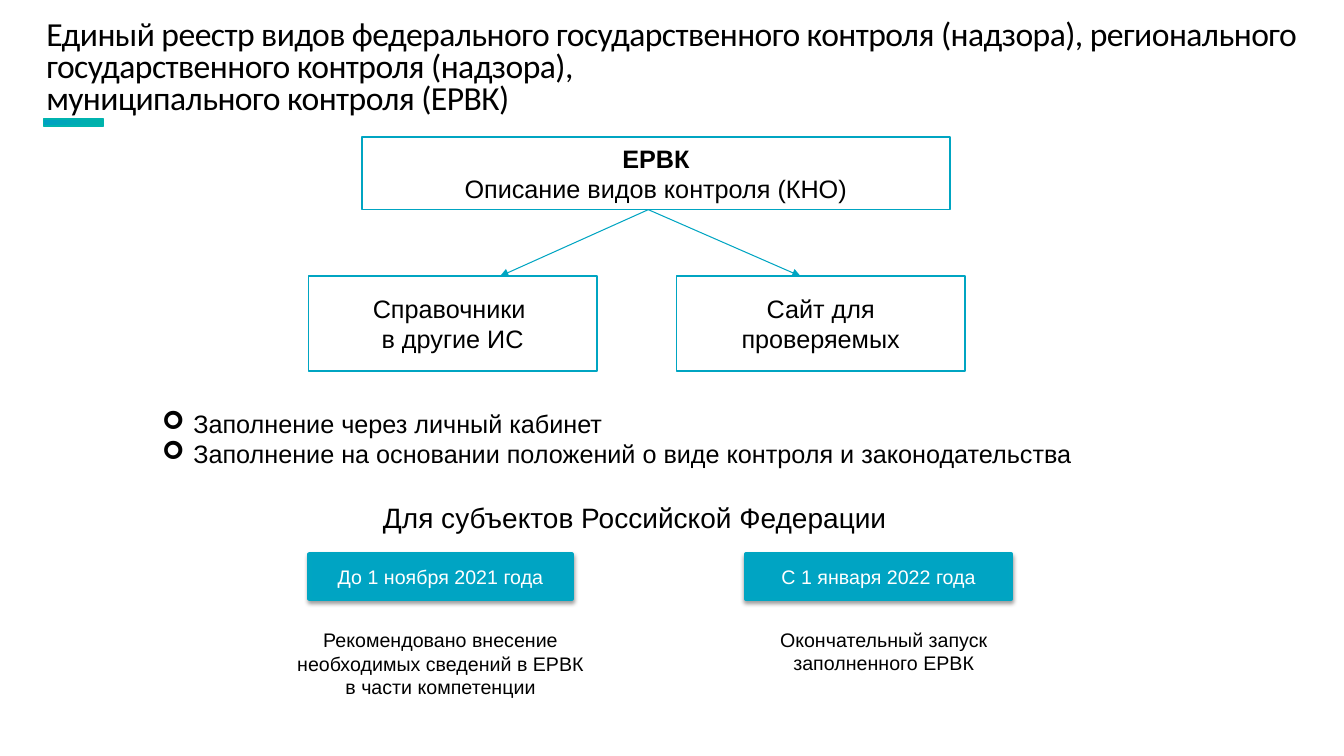
from lxml.etree import SubElement
from pptx import Presentation
from pptx.dml.color import RGBColor
from pptx.enum.shapes import MSO_CONNECTOR, MSO_SHAPE
from pptx.enum.text import MSO_ANCHOR, PP_ALIGN
from pptx.oxml.ns import qn
from pptx.util import Inches, Pt

HEX = {"ink": "000000", "white": "FFFFFF", "edge": "00A5C2", "fill": "00A4C3",
       "from": "00A0C3", "to": "00B3A9", "rim": "00B3AF"}
TITLE = ("Единый реестр видов федерального государственного контроля (надзора), "
         "регионального государственного контроля (надзора), \n"
         "муниципального контроля (ЕРВК)")
ROOT = ["ЕРВК", "Описание видов контроля (КНО)"]
LEAVES = [(3.06, 4.96, "Справочники \nв другие ИС"),
          (6.71, 7.94, "Сайт для проверяемых")]
NOTES = ["Заполнение через личный кабинет",
         "Заполнение на основании положений о виде контроля и законодательства"]
HEAD = "Для субъектов Российской Федерации"
DATES = [
    ((3.07, 2.6), "До 1 ноября 2021 года", (2.82, 3.1, 0.81),
     "Рекомендовано внесение необходимых сведений в ЕРВК в части компетенции"),
    ((7.4, 2.63), "С 1 января 2022 года", (7.34, 2.85, 0.57),
     "Окончательный запуск заполненного ЕРВК"),
]


def tone(name):
    return RGBColor.from_string(HEX[name])


def node(top, tag, **attrs):
    return SubElement(top, qn(tag), attrs)


def write(shape, lines, size=18, font="Arial", color="ink", align=PP_ALIGN.LEFT,
          anchor=MSO_ANCHOR.TOP, bold=0, inset=(0.1, 0.05), wrap=True,
          space=None, before=None, after=None, track=None, mark=None):
    """Fill a shape with formatted paragraphs; the first `bold` ones are bold."""
    frame = shape.text_frame
    frame.word_wrap, frame.vertical_anchor = wrap, anchor
    frame.margin_left = frame.margin_right = Inches(inset[0])
    frame.margin_top = frame.margin_bottom = Inches(inset[1])
    for i, line in enumerate(lines):
        para = frame.add_paragraph() if i else frame.paragraphs[0]
        para.text, para.alignment, para.line_spacing = line, align, space
        para.space_before = None if before is None else Pt(before)
        para.space_after = None if after is None else Pt(after)
        for run in para.runs:
            run.font.size, run.font.name, run.font.bold = Pt(size), font, i < bold
            run.font.color.rgb = tone(color)
            if track:
                run.font._element.set("spc", str(track))
        if mark:
            props = para._p.get_or_add_pPr()
            props.set("marL", str(Inches(0.31)))
            props.set("indent", str(-Inches(0.31)))
            node(props, "a:buFont", typeface="Wingdings")
            node(props, "a:buChar", char=mark)


def text(slide, place, lines, **style):
    box = slide.shapes.add_textbox(*map(Inches, place))
    write(box, lines, **style)


def rect(slide, place, line="edge", width=1.25, fill=None):
    box = slide.shapes.add_shape(MSO_SHAPE.RECTANGLE, *map(Inches, place))
    box.shadow.inherit = False
    box.line.color.rgb, box.line.width = tone(line), Pt(width)
    if fill:
        box.fill.solid()
        box.fill.fore_color.rgb = tone(fill)
    else:
        box.fill.background()
    return box


def shade(box):
    glow = node(box._element.spPr.find(qn("a:effectLst")), "a:outerShdw",
                blurRad=str(Pt(3.1)), dist=str(Pt(1.6)), dir="5400000",
                rotWithShape="0")
    node(node(glow, "a:srgbClr", val=HEX["ink"]), "a:alpha", val="38000")


def arrow(slide, start, end):
    link = slide.shapes.add_connector(
        MSO_CONNECTOR.STRAIGHT, *map(Inches, start + end))
    link.line.color.rgb, link.line.width = tone("edge"), Pt(0.75)
    node(link.line._get_or_add_ln(), "a:tailEnd", type="triangle")
    node(link._element.spPr, "a:effectLst")


def main():
    deck = Presentation()
    deck.slide_width, deck.slide_height = Inches(13.33), Inches(7.5)
    slide = deck.slides.add_slide(deck.slide_layouts[6])
    mid = {"align": PP_ALIGN.CENTER, "anchor": MSO_ANCHOR.MIDDLE}

    text(slide, (0.43, 0.02, 13.33, 1.33), [TITLE], size=24, font="Calibri",
         anchor=MSO_ANCHOR.MIDDLE, inset=(0.03, 0.03), space=0.8, before=21,
         track=-40)
    bar = rect(slide, (0.43, 1.18, 0.6, 0.07), line="rim", width=1)
    bar.fill.gradient()
    bar.fill.gradient_angle = 0
    for stop, name in zip(bar.fill.gradient_stops, ("from", "to")):
        stop.color.rgb = tone(name)

    text(slide, (3.7, 4.92, 5.23, 0.44), [HEAD], size=20, wrap=False)
    for (left, width), date, (x, w, h), note in DATES:
        box = rect(slide, (left, 5.5, width, 0.44), width=3, fill="fill")
        shade(box)
        write(box, [date], size=14, color="white", inset=(0.24, 0.12),
              after=0.5, **mid)
        text(slide, (x, 6.18, w, h), [note], size=14, align=PP_ALIGN.CENTER)

    write(rect(slide, (3.59, 1.36, 5.83, 0.72)), ROOT, bold=1, **mid)
    for left, tip, label in LEAVES:
        arrow(slide, (6.43, 2.08), (tip, 2.74))
        write(rect(slide, (left, 2.74, 2.86, 0.94)), [label], **mid)
    text(slide, (1.51, 4, 10.12, 0.71), NOTES, mark="➢")
    deck.save("out.pptx")


if __name__ == "__main__":
    main()
